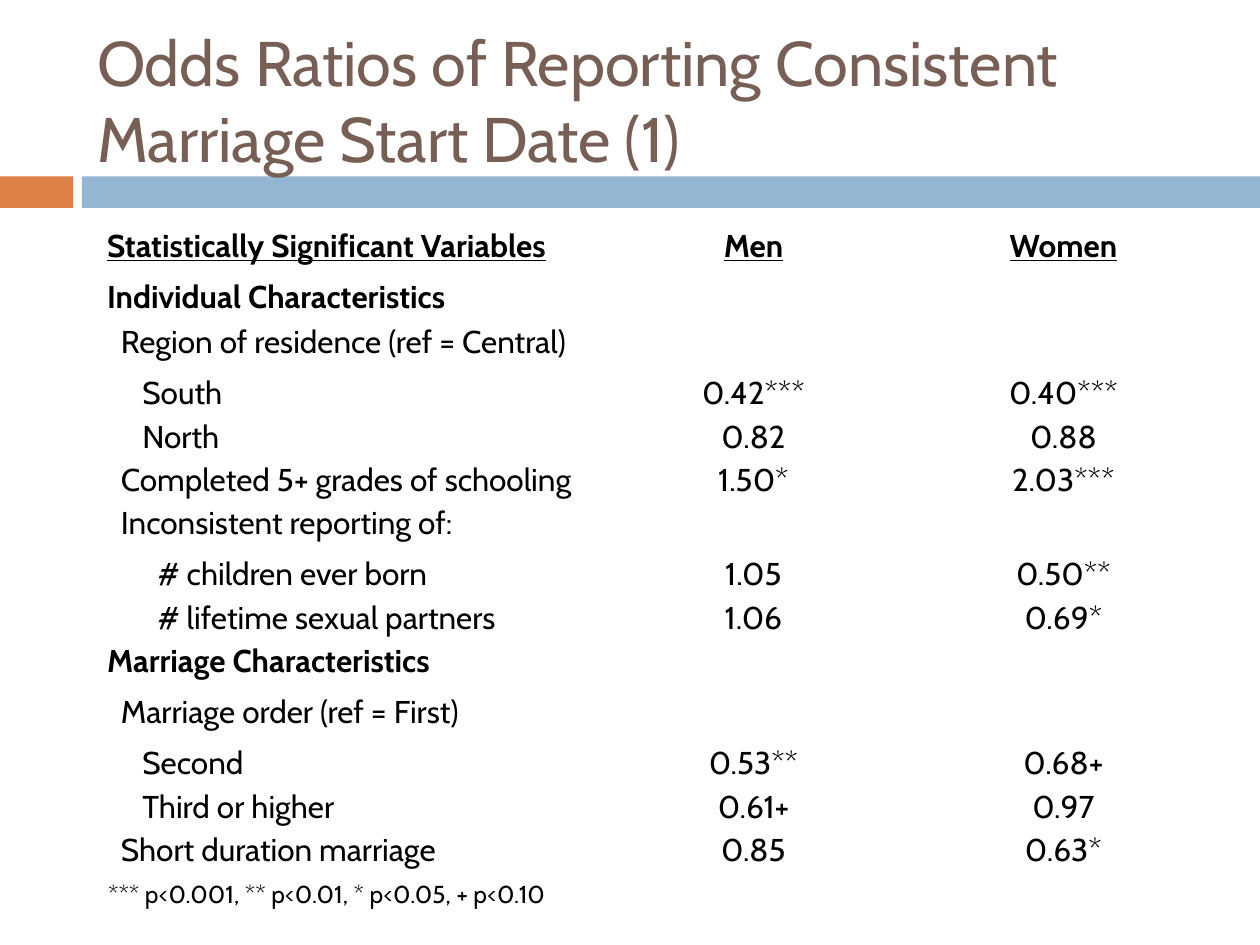
from pptx import Presentation
from pptx.dml.color import RGBColor
from pptx.enum.shapes import MSO_SHAPE as SHAPE
from pptx.enum.text import MSO_ANCHOR as ANCHOR, MSO_AUTO_SIZE as FIT, PP_ALIGN as ALIGN
from pptx.util import Inches, Pt

BLACK = RGBColor(0x00, 0x00, 0x00)
BROWN = RGBColor(0x77, 0x5F, 0x55)
ORANGE = RGBColor(0xDD, 0x80, 0x47)
BLUE = RGBColor(0x94, 0xB6, 0xD2)

WIDTH, HEIGHT = 10, 7.5
INDENTS = (0, 0.11, 0.28, 0.4)
HEADING = {"bold": True}
HEADER = {"bold": True, "underline": True}

ROWS = [
    (0, "Statistically Significant Variables", "Men", "Women"),
    (0, "Individual Characteristics", "", ""),
    (1, "Region of residence (ref = Central)", "", ""),
    (2, "South", "0.42***", "0.40***"),
    (2, "North", "0.82", "0.88"),
    (1, "Completed 5+ grades of schooling", "1.50*", "2.03***"),
    (1, "Inconsistent reporting of:", "", ""),
    (3, "# children ever born", "1.05", "0.50**"),
    (3, "# lifetime sexual partners", "1.06", "0.69*"),
    (0, "Marriage Characteristics", "", ""),
    (1, "Marriage order (ref = First)", "", ""),
    (2, "Second", "0.53**", "0.68+"),
    (2, "Third or higher", "0.61+", "0.97"),
    (1, "Short duration marriage", "0.85", "0.63*"),
]


class Deck:
    font = "Cabin"

    def __init__(self):
        self.prs = Presentation()
        self.prs.slide_width = Inches(WIDTH)
        self.prs.slide_height = Inches(HEIGHT)
        self.s = self.prs.slides.add_slide(self.prs.slide_layouts[5])

    def box(self, x, y, w, h):
        return [Inches(v * side) for v, side in
                ((x, WIDTH), (y, HEIGHT), (w, WIDTH), (h, HEIGHT))]

    def add_text(self, p, text, size, color=BLACK, **look):
        r = p.add_run()
        r.text = text
        for name, value in {"name": self.font, "size": Pt(size), **look}.items():
            setattr(r.font, name, value)
        r.font.color.rgb = color

    def bar(self, x, y, w, h, color):
        sp = self.s.shapes.add_shape(SHAPE.RECTANGLE, *self.box(x, y, w, h))
        sp.shadow.inherit = False
        sp.fill.solid()
        sp.fill.fore_color.rgb = color
        sp.line.fill.background()

    def title(self, text, x, y, w, h):
        sp = self.s.shapes.title
        sp.left, sp.top, sp.width, sp.height = self.box(x, y, w, h)
        tf = sp.text_frame
        tf.auto_size, tf.vertical_anchor = FIT.NONE, ANCHOR.MIDDLE
        p = tf.paragraphs[0]
        p.alignment = ALIGN.LEFT
        self.add_text(p, text, 36, BROWN)
        self.s.shapes.element.append(sp.element)

    def table(self, rows, x, y, w, h, widths, row_height):
        shape = self.s.shapes.add_table(len(rows), len(widths), *self.box(x, y, w, h))
        table = shape.table
        table.first_row = table.horz_banding = False
        for column, width in zip(table.columns, widths):
            column.width = Inches(width * WIDTH)
        for i, (level, *texts) in enumerate(rows):
            table.rows[i].height = Inches(row_height * HEIGHT)
            look = HEADER if i == 0 else HEADING if level == 0 else {}
            for j, text in enumerate(texts):
                cell = table.cell(i, j)
                cell.fill.background()
                if not text:
                    continue
                p = cell.text_frame.paragraphs[0]
                if j:
                    p.alignment = ALIGN.CENTER
                else:
                    cell.margin_left = Inches(0.1 + INDENTS[level])
                if i > 1:
                    p.line_spacing = 0.8
                self.add_text(p, text, 18, **look)

    def note(self, text, x, y, w, h):
        tf = self.s.shapes.add_textbox(*self.box(x, y, w, h)).text_frame
        tf.word_wrap, tf.auto_size = False, FIT.SHAPE_TO_FIT_TEXT
        self.add_text(tf.paragraphs[0], text, 14)


def main():
    deck = Deck()
    bar_top, bar_height = 1.4 / HEIGHT, 0.25 / HEIGHT
    deck.bar(0, bar_top, 0.58 / WIDTH, bar_height, ORANGE)
    deck.bar(0.65 / WIDTH, bar_top, 9.35 / WIDTH, bar_height, BLUE)
    deck.title("Odds Ratios of Reporting Consistent Marriage Start Date (1)",
               0.67 / WIDTH, 0.25 / HEIGHT, 8.92 / WIDTH, 1.08 / HEIGHT)
    deck.table(ROWS, 0.75 / WIDTH, 1.75 / HEIGHT, 8.92 / WIDTH, 4.88 / HEIGHT,
               (4 / WIDTH, 2.46 / WIDTH, 2.46 / WIDTH), 0.25 / HEIGHT)
    deck.note("*** p<0.001, ** p<0.01, * p<0.05, + p<0.10",
              0.76 / WIDTH, 6.93 / HEIGHT, 3.91 / WIDTH, 0.34 / HEIGHT)
    deck.prs.save("out.pptx")


if __name__ == "__main__":
    main()
